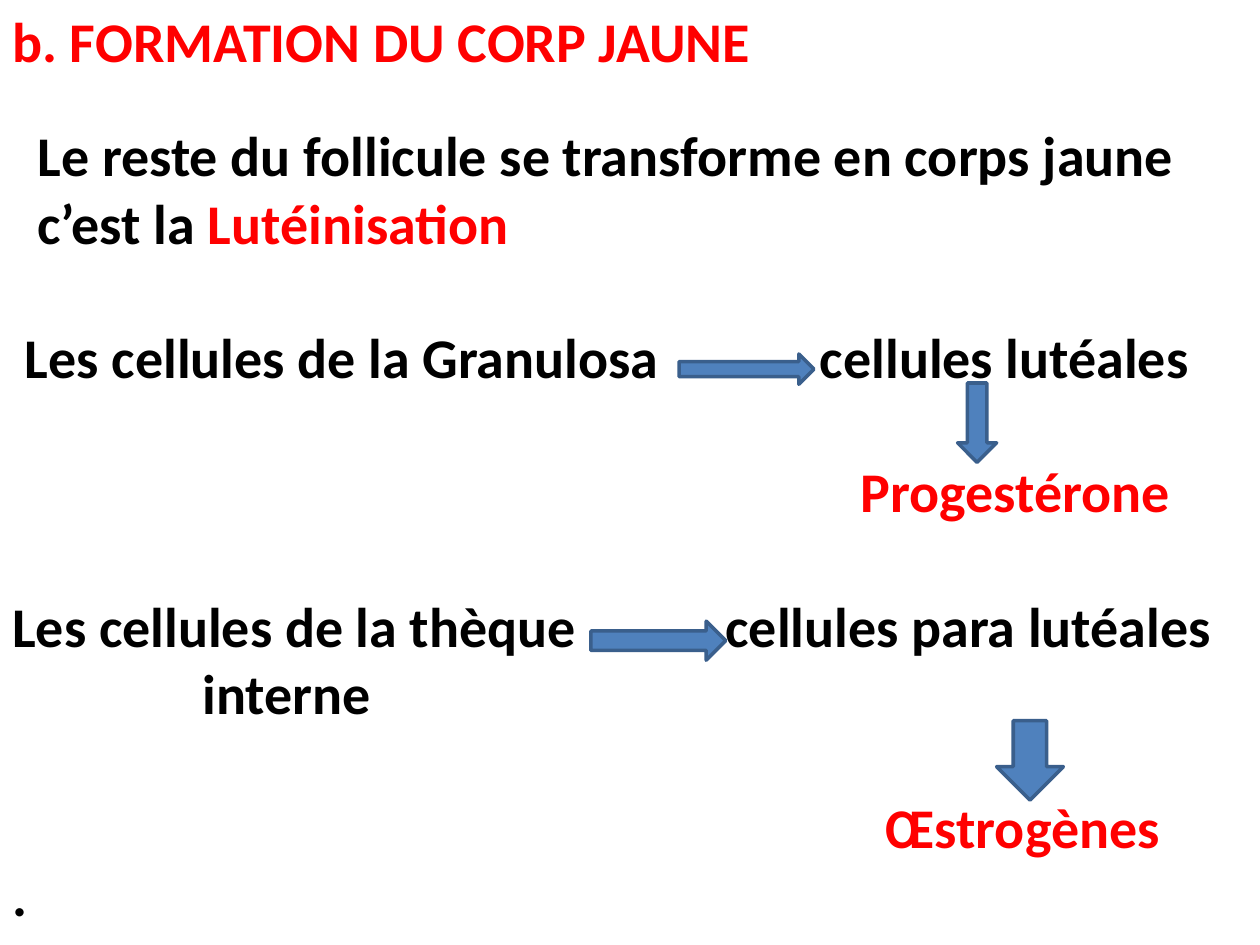
from pptx import Presentation, util as u
from pptx.dml.color import RGBColor
from pptx.enum import shapes, text
from pptx.oxml.ns import qn
from lxml import etree

BLACK = RGBColor(0x00, 0x00, 0x00)
RED = RGBColor(0xFF, 0x00, 0x00)
BLUE = RGBColor(0x4F, 0x81, 0xBD)
DARK_BLUE = RGBColor(0x3A, 0x5F, 0x8C)

FONT = "Calibri"
FONT_SIZE = 32
BLANK_LINE = u.Pt(1.2 * FONT_SIZE)
COLUMN = u.Inches(0.1)  # tab stops are counted in these columns

# (lines left free above, tab stops in columns, [(text, colour), ...])
BODY = [
    (0, [2], [("\tLe reste du follicule se transforme en corps jaune", BLACK)]),
    (0, [2], [("\tc’est la ", BLACK), ("Lutéinisation", RED)]),
    (1, [1, 64.1], [("\tLes cellules de la Granulosa\tcellules lutéales", BLACK)]),
    (1, [67.3], [("\tProgestérone", RED)]),
    (1, [56.6], [("Les cellules de la thèque\tcellules para lutéales", BLACK)]),
    (0, [15.1], [("\tinterne", BLACK)]),
    (1, [69.3], [("\tŒstrogènes", RED)]),
    (0, [], [(".", BLACK)]),
]
TITLE = [(0, [], [("b. FORMATION DU CORP JAUNE", RED)])]

RIGHT = shapes.MSO_SHAPE.RIGHT_ARROW
DOWN = shapes.MSO_SHAPE.DOWN_ARROW
ARROWS = [  # kind, left, top, width, height in inches
    (RIGHT, 5.39, 2.81, 1.07, 0.24),
    (RIGHT, 4.69, 4.93, 1.07, 0.31),
    (DOWN, 7.6, 3.04, 0.31, 0.63),
    (DOWN, 7.91, 5.72, 0.53, 0.63),
]


def set_tab_stops(paragraph, columns):
    properties = paragraph._p.get_or_add_pPr()
    tab_list = etree.Element(qn("a:tabLst"))
    for column in columns:
        etree.SubElement(tab_list, qn("a:tab"),
                         pos=str(int(column * COLUMN)), algn="l")
    # the schema wants the tab list ahead of the default run properties
    properties.find(qn("a:defRPr")).addprevious(tab_list)


def add_text(slide, box, lines, anchor, wrap=True):
    shape = slide.shapes.add_textbox(*map(u.Inches, box))
    frame = shape.text_frame
    frame.word_wrap = wrap
    frame.vertical_anchor = anchor
    frame.auto_size = text.MSO_AUTO_SIZE.SHAPE_TO_FIT_TEXT
    for index, (blank_lines, columns, runs) in enumerate(lines):
        paragraph = frame.add_paragraph() if index else frame.paragraphs[0]
        paragraph.space_before = blank_lines * BLANK_LINE
        paragraph.font.name = FONT
        paragraph.font.size = u.Pt(FONT_SIZE)
        paragraph.font.bold = True
        if columns:
            set_tab_stops(paragraph, columns)
        for words, colour in runs:
            run = paragraph.add_run()
            run.text = words
            run.font.color.rgb = colour


def add_arrow(slide, kind, *box):
    shape = slide.shapes.add_shape(kind, *map(u.Inches, box))
    shape.shadow.inherit = False
    shape.fill.solid()
    shape.fill.fore_color.rgb = BLUE
    shape.line.color.rgb = DARK_BLUE
    shape.line.width = u.Pt(2)


def main():
    presentation = Presentation()
    presentation.slide_width = u.Inches(10)
    presentation.slide_height = u.Inches(7.5)
    slide = presentation.slides.add_slide(presentation.slide_layouts[6])

    # Explanation and heading
    add_text(slide, (0, 0.88, 10, 6.56), BODY, text.MSO_ANCHOR.MIDDLE)
    add_text(slide, (0, 0, 6.1, 0.64), TITLE, text.MSO_ANCHOR.TOP, wrap=False)

    # Arrows between the cells and their hormones
    for arrow in ARROWS:
        add_arrow(slide, *arrow)

    presentation.save("out.pptx")


if __name__ == "__main__":
    main()
